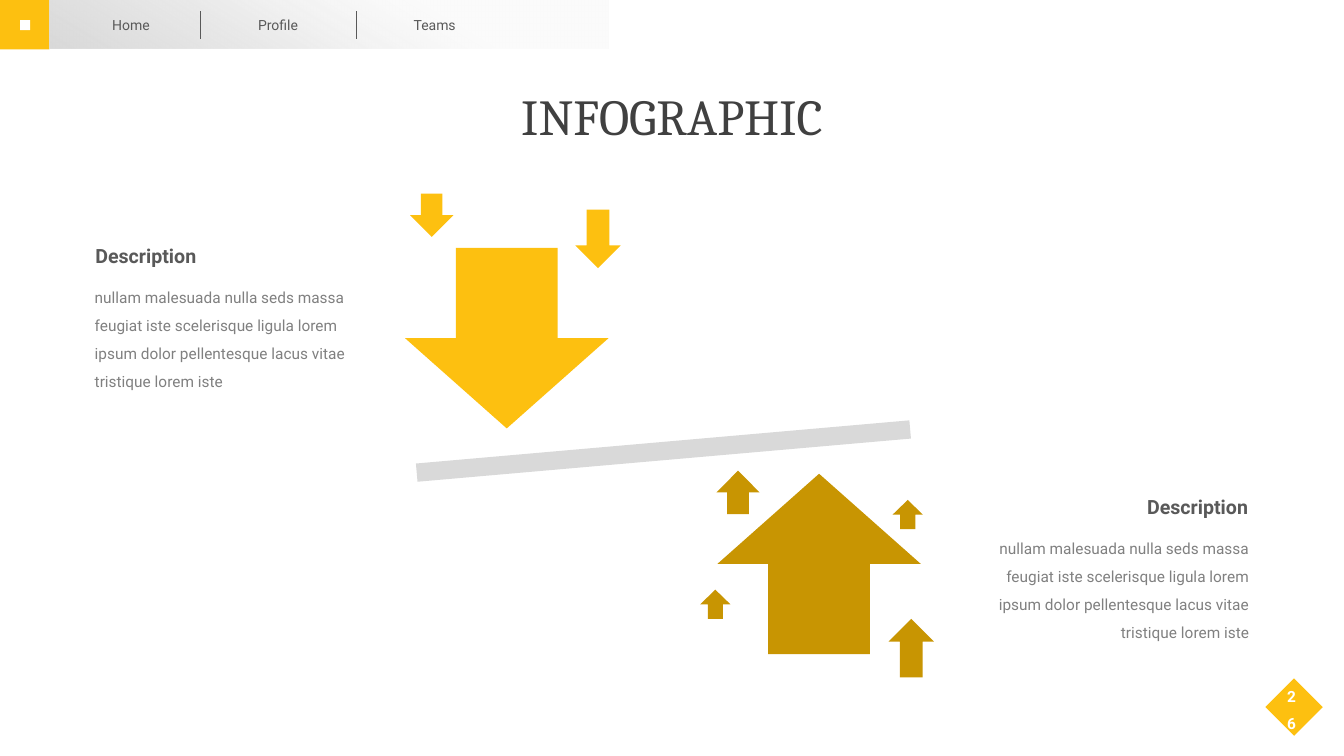
from lxml.etree import SubElement
from pptx import Presentation
from pptx.dml.color import RGBColor
from pptx.enum.shapes import MSO_CONNECTOR, MSO_SHAPE
from pptx.enum.text import MSO_ANCHOR, PP_ALIGN
from pptx.oxml import parse_xml
from pptx.oxml.ns import nsdecls, qn
from pptx.util import Inches, Pt

CELL = Inches(0.1)
COLUMNS, ROWS = 133.4, 75

YELLOW = RGBColor(0xFD, 0xC0, 0x10)
OCHRE = RGBColor(0xC8, 0x95, 0x02)
SILVER = RGBColor(0xD9, 0xD9, 0xD9)
PALE = RGBColor(0xF2, 0xF2, 0xF2)
WHITE = RGBColor(0xFF, 0xFF, 0xFF)
TITLE_GRAY = RGBColor(0x40, 0x40, 0x40)
HEADING_GRAY = RGBColor(0x59, 0x59, 0x59)
BODY_GRAY = RGBColor(0x80, 0x80, 0x80)

DESCRIPTION = (
    "nullam malesuada nulla seds massa feugiat iste scelerisque ligula lorem "
    "ipsum dolor pellentesque lacus vitae tristique lorem iste"
)


def cells(*counts):
    return [round(count * CELL) for count in counts]


def paint(shape, color):
    shape.shadow.inherit = False
    shape.line.fill.background()
    shape.fill.solid()
    shape.fill.fore_color.rgb = color


def add_block(slide, preset, box, color, rotation=0):
    shape = slide.shapes.add_shape(preset, *cells(*box))
    paint(shape, color)
    shape.rotation = rotation
    return shape


def add_text(slide, text, box, size, color, font="Roboto", align=PP_ALIGN.CENTER,
             bold=False, spacing=1.0, wrap=False):
    frame = slide.shapes.add_textbox(*cells(*box)).text_frame
    frame.margin_left = frame.margin_top = frame.margin_right = frame.margin_bottom = 0
    frame.word_wrap = wrap
    paragraph = frame.paragraphs[0]
    paragraph.text = text
    paragraph.alignment = align
    paragraph.line_spacing = spacing
    paragraph.font.name = font
    paragraph.font.size = Pt(size)
    paragraph.font.bold = bold
    paragraph.font.color.rgb = color
    return frame


def add_description(slide, heading_box, body_box, align):
    add_text(slide, DESCRIPTION, body_box, 11, BODY_GRAY, align=align, spacing=1.5, wrap=True)
    add_text(slide, "Description", heading_box, 14, HEADING_GRAY,
             align=PP_ALIGN.RIGHT, bold=True, spacing=1.5)


def add_window_icon(slide, start, side, pitch):
    corners = [(start + column * pitch, start + row * pitch)
               for row in range(2) for column in range(2)]
    builder = slide.shapes.build_freeform(*corners[0], scale=CELL)
    for left, top in corners:
        builder.move_to(left, top)
        builder.add_line_segments([
            (left + side, top), (left + side, top + side), (left, top + side)])
    paint(builder.convert_to_shape(), WHITE)


def add_gradient_bar(slide, box, stops, angle):
    bar = add_block(slide, MSO_SHAPE.RECTANGLE, box, SILVER)
    gradient = parse_xml(
        f'<a:gradFill {nsdecls("a")} rotWithShape="1"><a:gsLst/>'
        f'<a:lin ang="{angle * 60000}" scaled="0"/></a:gradFill>')
    for position, color, opacity in stops:
        stop = SubElement(gradient[0], qn("a:gs"), pos=str(position * 1000))
        tone = SubElement(stop, qn("a:srgbClr"), val=str(color))
        SubElement(tone, qn("a:alpha"), val=str(opacity * 1000))
    properties = bar.element.spPr
    properties.replace(properties.find(qn("a:solidFill")), gradient)


def add_divider(slide, column):
    divider = slide.shapes.add_connector(
        MSO_CONNECTOR.STRAIGHT, *cells(column, 1.1, column, 3.9))
    divider.line.color.rgb = HEADING_GRAY
    divider.line.width = Pt(0.5)
    SubElement(divider.element.spPr, qn("a:effectLst"))


def add_balance(slide):
    add_block(slide, MSO_SHAPE.MATH_MINUS, (32.4, 40.9, 66.9, 7.7), SILVER, 355)
    add_block(slide, MSO_SHAPE.DOWN_ARROW, (40.2, 24.6, 20.2, 17.9), YELLOW)
    add_block(slide, MSO_SHAPE.UP_ARROW, (71.2, 47, 20.2, 17.9), OCHRE)
    for box in [(57.1, 20.8, 4.5, 5.8), (40.7, 19.2, 4.3, 4.3)]:
        add_block(slide, MSO_SHAPE.DOWN_ARROW, box, YELLOW)
    for box in [(88.2, 61.4, 4.5, 5.8), (71.1, 46.7, 4.3, 4.3),
                (69.5, 58.5, 3, 2.9), (88.6, 49.6, 3, 2.9)]:
        add_block(slide, MSO_SHAPE.DOWN_ARROW, box, OCHRE, 180)


def add_navigation(slide):
    add_block(slide, MSO_SHAPE.RECTANGLE, (0, 0, 4.9, 4.9), YELLOW)
    add_window_icon(slide, 1.5, 0.9, 1)
    add_gradient_bar(slide, (4.9, 0, 55.5, 4.8),
                     [(30, PALE, 30), (65, SILVER, 55), (100, SILVER, 100)], 120)
    for label, left, width in [("Home", 11.1, 3.8), ("Profile", 25.6, 4), ("Teams", 41, 4.3)]:
        add_text(slide, label, (left, 1.6, width, 1.7), 10, HEADING_GRAY)
    for column in (19.9, 35.4):
        add_divider(slide, column)


def add_page_number(slide):
    add_block(slide, MSO_SHAPE.DIAMOND, (125.6, 67.3, 5.7, 5.7), YELLOW)
    frame = add_text(slide, "26", (127.6, 68.7, 1.8, 2.5), 11, WHITE,
                     bold=True, spacing=1.5, wrap=True)
    frame.vertical_anchor = MSO_ANCHOR.MIDDLE
    frame.margin_right = cells(0.6)[0]


def main():
    presentation = Presentation()
    presentation.slide_width, presentation.slide_height = cells(COLUMNS, ROWS)
    slide = presentation.slides.add_slide(presentation.slide_layouts[6])
    add_text(slide, "INFOGRAPHIC", (49.1, 8.4, 35.2, 6.1), 36, TITLE_GRAY,
             font="Cambria", wrap=True)
    add_balance(slide)
    add_description(slide, (9.4, 23, 10.1, 3.1), (9.4, 27.7, 25.1, 10.8), PP_ALIGN.LEFT)
    add_description(slide, (113.8, 47.9, 10.1, 3.1), (99.1, 52.6, 24.9, 10.8), PP_ALIGN.RIGHT)
    add_navigation(slide)
    add_page_number(slide)
    presentation.save("out.pptx")


main()
